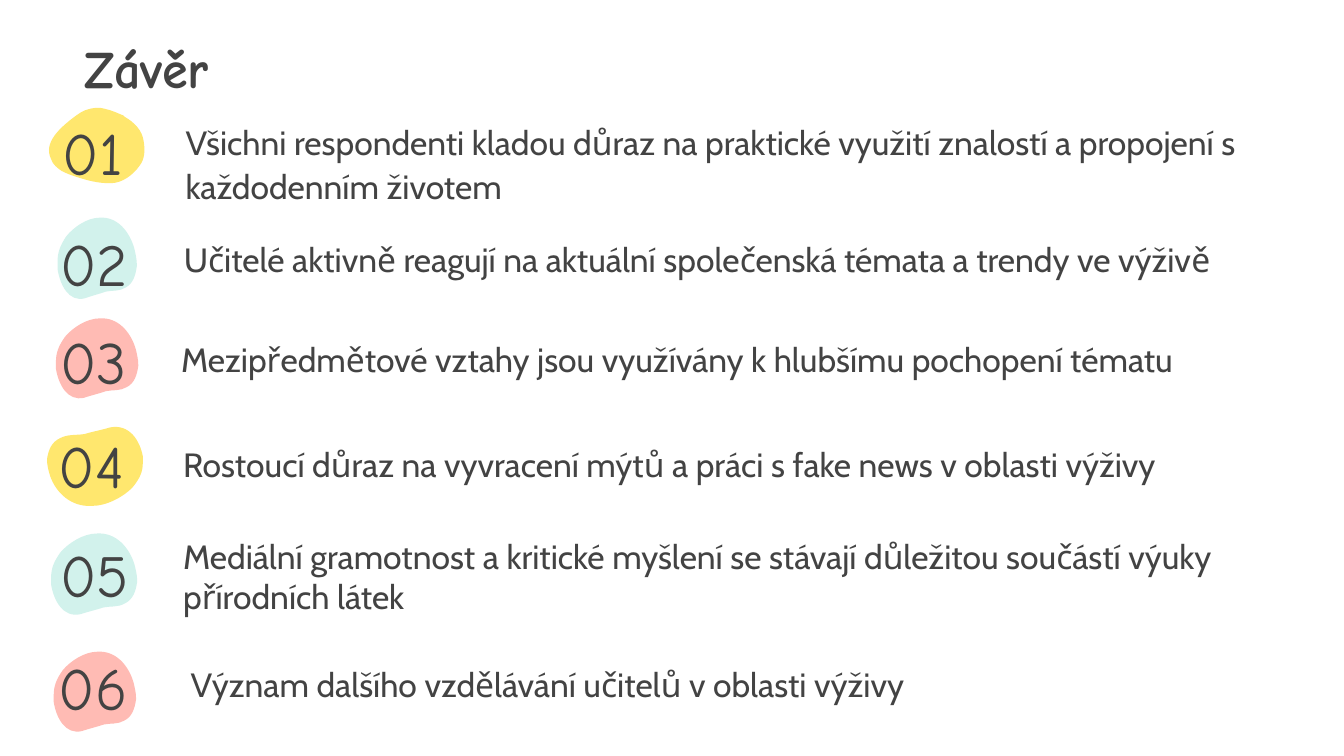
from lxml import etree
from pptx import Presentation
from pptx.dml.color import RGBColor
from pptx.enum.text import MSO_ANCHOR, MSO_AUTO_SIZE, PP_ALIGN
from pptx.oxml.ns import qn
from pptx.util import Pt

TOP, MIDDLE, BOTTOM = MSO_ANCHOR.TOP, MSO_ANCHOR.MIDDLE, MSO_ANCHOR.BOTTOM
CENTER, LEFT = PP_ALIGN.CENTER, PP_ALIGN.LEFT
NO_FIT = MSO_AUTO_SIZE.NONE

INK = RGBColor(0x43, 0x43, 0x43)
YELLOW = RGBColor(0xFF, 0xE7, 0x6E)
MINT = RGBColor(0xD2, 0xF2, 0xEC)
PINK = RGBColor(0xFF, 0xBB, 0xB4)
HAND, BODY, SPACER = "Comic Neue", "Cabin", "Lato"

# Blob outlines: (width, height), start point, cubic curves (control, control, end)
PEBBLE = ((64, 61), (64, 36), [
    ((64, 32), (63, 28), (62, 24)), ((58, 11), (48, 0), (34, 1)),
    ((24, 1), (13, 8), (7, 15)), ((2, 22), (0, 27), (0, 34)),
    ((0, 36), (0, 37), (0, 39)), ((2, 51), (9, 64), (22, 61)),
    ((28, 59), (33, 58), (39, 56)), ((44, 55), (50, 56), (55, 53)),
    ((61, 50), (63, 44), (64, 37)), ((64, 37), (64, 36), (64, 36))])
DROP = ((72, 56), (57, 7), [
    ((57, 6), (56, 6), (56, 6)), ((51, 4), (47, 2), (42, 1)),
    ((39, 0), (35, 0), (31, 1)), ((26, 2), (22, 5), (18, 8)),
    ((9, 15), (-4, 26), (2, 38)), ((3, 42), (7, 45), (10, 47)),
    ((14, 49), (17, 50), (20, 51)), ((29, 54), (37, 56), (46, 56)),
    ((55, 56), (63, 50), (68, 43)), ((72, 38), (72, 31), (71, 25)),
    ((70, 17), (64, 11), (57, 7))])

# Blobs: outline, box, rotation, colour
BLOBS = [
    (DROP, (25.9, 57.6, 51.8, 40.6), 0, YELLOW),
    (PEBBLE, (30.8, 115.9, 42.5, 43.9), 0, MINT),
    (PEBBLE, (30, 169.9, 44.1, 43.2), 0, PINK),
    (PEBBLE, (25.2, 229, 51.3, 42.7), 180, YELLOW),
    (PEBBLE, (27.4, 285.1, 46.1, 43.9), 0, MINT),
    (PEBBLE, (28.8, 348.5, 44.1, 43.2), 0, PINK),
]

TITLE = "Závěr"
TITLE_BOX = (18.7, 16.6, 119.5, 38.9)
NUMBER_CORNERS = [(26.6, 47), (25.2, 106.4), (25.2, 159.4),
                  (24.5, 215), (25.2, 273), (24.5, 333.6)]
NUMBER_SIZE = (64.8, 60.5)
HANGING = (36, -25.9)  # left margin and first-line indent

# Conclusions: text, box, size of the closing space, hanging indent
CONCLUSIONS = [
    ("Všichni respondenti kladou důraz na praktické využití znalostí a propojení s každodenním životem",
     (92.3, 58.3, 583.9, 28.1), 20, False),
    ("Učitelé aktivně reagují na aktuální společenská témata a trendy ve výživě",
     (91.4, 114.8, 603.4, 60.5), 24, False),
    ("Mezipředmětové vztahy jsou využívány k hlubšímu pochopení tématu",
     (79.8, 174.2, 576.7, 60.5), None, True),
    ("Rostoucí důraz na vyvracení mýtů a práci s fake news v oblasti výživy",
     (91, 224.6, 565.9, 60.5), 24, False),
    ("Mediální gramotnost a kritické myšlení se stávají důležitou součástí výuky přírodních látek",
     (91, 279.9, 583.9, 28.1), None, False),
    ("Význam dalšího vzdělávání učitelů v oblasti výživy",
     (85, 348.5, 429.8, 60.5), None, True),
]


def add_blob(page, outline, area, rotation, colour):
    (width, height), start, curves = outline
    builder = page.shapes.build_freeform(*start)
    builder.add_line_segments([curve[-1] for curve in curves], close=True)
    blob = builder.convert_to_shape()
    blob.left, blob.top, blob.width, blob.height = map(Pt, area)
    blob.rotation = rotation
    blob.fill.solid()
    blob.fill.fore_color.rgb = colour
    blob.line.fill.background()
    blob.shadow.inherit = False

    # Redraw the outline as cubic curves in its own units
    track = next(blob._element.iter(qn("a:path")))
    track.set("w", str(width))
    track.set("h", str(height))
    for part in list(track):
        track.remove(part)
    for tag, points in [("a:moveTo", [start])] + [("a:cubicBezTo", c) for c in curves]:
        part = etree.SubElement(track, qn(tag))
        for x, y in points:
            etree.SubElement(part, qn("a:pt"), x=str(x), y=str(y))
    etree.SubElement(track, qn("a:close"))


def write(box, text, size, font, anchor=TOP, align=LEFT, bold=False):
    frame = box.text_frame
    frame.word_wrap = True
    frame.auto_size = NO_FIT
    frame.vertical_anchor = anchor
    frame.margin_left = frame.margin_right = Pt(7.2)
    frame.margin_top = frame.margin_bottom = Pt(7.2)
    para = frame.paragraphs[0]
    para.alignment = align
    span = para.add_run()
    span.text = text
    span.font.size, span.font.name, span.font.bold = Pt(size), font, bold
    span.font.color.rgb = INK
    return para


deck = Presentation()
deck.slide_width, deck.slide_height = Pt(720), Pt(405)
page = deck.slides.add_slide(deck.slide_layouts[5])

# Title
title = page.shapes.title
title.left, title.top, title.width, title.height = map(Pt, TITLE_BOX)
write(title, TITLE, 28, HAND, MIDDLE, CENTER, True)

# Coloured blobs
for blob in BLOBS:
    add_blob(page, *blob)

# Numbers
for number, corner in enumerate(NUMBER_CORNERS, 1):
    label = page.shapes.add_textbox(*map(Pt, corner + NUMBER_SIZE))
    write(label, f"{number:02}", 32, HAND, BOTTOM)

# Conclusions
for text, area, spacer, hanging in CONCLUSIONS:
    para = write(page.shapes.add_textbox(*map(Pt, area)), text, 18, BODY)
    if spacer:  # a taller closing space sets the line height
        span = para.add_run()
        span.text = " "
        span.font.size, span.font.name = Pt(spacer), SPACER
    if hanging:
        properties = para._p.get_or_add_pPr()
        for key, value in zip(("marL", "indent"), HANGING):
            properties.set(key, str(Pt(value)))

deck.save("out.pptx")
